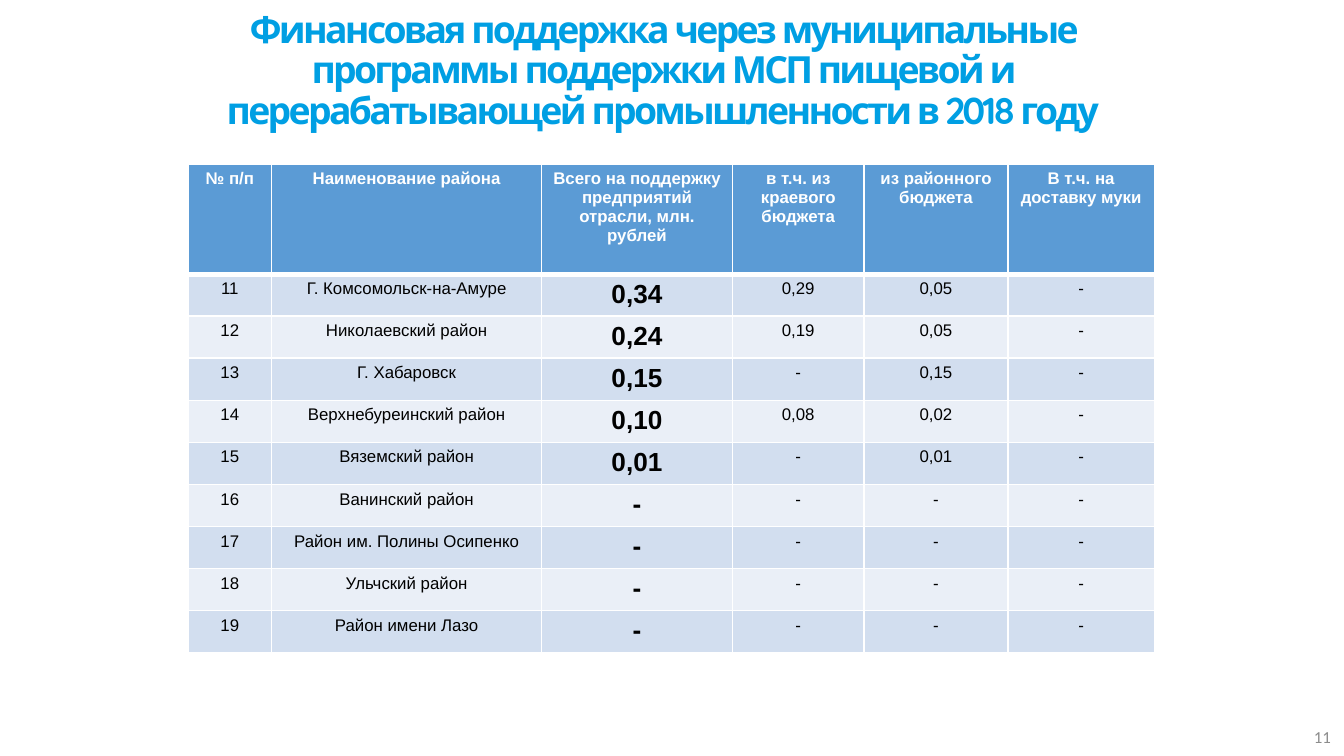
from lxml.etree import SubElement
from pptx import Presentation
from pptx.dml.color import RGBColor
from pptx.enum.text import MSO_ANCHOR, PP_ALIGN
from pptx.oxml.ns import qn
from pptx.util import Inches, Pt

TITLE = (
    "Финансовая поддержка через муниципальные программы поддержки МСП "
    "пищевой и перерабатывающей промышленности в 2018 году"
)
HEADERS = [
    "№ п/п",
    "Наименование района",
    "Всего на поддержку предприятий отрасли, млн. рублей",
    "в т.ч. из краевого бюджета",
    "из районного бюджета",
    "В т.ч. на доставку муки",
]
DISTRICTS = [
    ("Г. Комсомольск-на-Амуре", "0,34", "0,29", "0,05"),
    ("Николаевский район", "0,24", "0,19", "0,05"),
    ("Г. Хабаровск", "0,15", "-", "0,15"),
    ("Верхнебуреинский район", "0,10", "0,08", "0,02"),
    ("Вяземский район", "0,01", "-", "0,01"),
    ("Ванинский район", "-", "-", "-"),
    ("Район им. Полины Осипенко", "-", "-", "-"),
    ("Ульчский район", "-", "-", "-"),
    ("Район имени Лазо", "-", "-", "-"),
]
FIRST_NUMBER = 11
COLUMN_WIDTHS = [0.62, 2.01, 1.42, 0.98, 1.07, 1.09]
TABLE_HEIGHT = 3.64
HEADER_HEIGHT = 0.82
TOTAL_COLUMN = 2
HEADER_FILL = "5B9BD5"
BAND_FILLS = ["D2DEEF", "EAEFF7"]
WHITE = "FFFFFF"

HEADER_FORMAT = {"name": "Arial", "size": Pt(9), "bold": True}
BODY_FORMAT = {"name": "Arial", "size": Pt(9), "bold": False}
TOTAL_FORMAT = {"name": "Arial", "size": Pt(14), "bold": True}
TITLE_FORMAT = {"name": "Quicksand", "size": Pt(20), "bold": True}
NUMBER_FORMAT = {"name": "Calibri", "size": Pt(9), "bold": False}


def color(value):
    return RGBColor.from_string(value)


def write_text(frame, text, font_format, font_color, alignment):
    para = frame.paragraphs[0]
    para.alignment = alignment
    span = para.add_run()
    span.text = text
    for name, value in font_format.items():
        setattr(span.font, name, value)
    span.font.color.rgb = color(font_color)
    return para, span


def add_text_box(page, place, text, font_format, font_color, alignment):
    box = page.shapes.add_textbox(*map(Inches, place))
    frame = box.text_frame
    frame.word_wrap = True
    frame.vertical_anchor = MSO_ANCHOR.MIDDLE
    para, span = write_text(frame, text, font_format, font_color, alignment)
    return frame, para, span


def add_title(page):
    place = (1.11, 0.32, 7.64, 0.5)
    frame, para, span = add_text_box(
        page, place, TITLE, TITLE_FORMAT, "009FE3", PP_ALIGN.CENTER
    )
    frame.margin_bottom = Inches(0.12)
    para.line_spacing = 0.9
    span.font._element.set("spc", "-150")


def set_borders(cell, widths):
    properties = cell._tc.get_or_add_tcPr()
    for position, (side, width) in enumerate(widths.items()):
        line = properties.makeelement(qn(f"a:{side}"), {"w": str(Pt(width))})
        fill = SubElement(line, qn("a:solidFill"))
        SubElement(fill, qn("a:srgbClr"), val=WHITE)
        properties.insert(position, line)


def fill_cell(cell, text, font_format, font_color, fill, top=1, bottom=1):
    margins = {
        "margin_left": 0.07,
        "margin_top": 0.04,
        "margin_right": 0.07,
        "margin_bottom": 0.04,
    }
    for name, value in margins.items():
        setattr(cell, name, Inches(value))
    cell.fill.solid()
    cell.fill.fore_color.rgb = color(fill)
    write_text(cell.text_frame, text, font_format, font_color, PP_ALIGN.CENTER)
    set_borders(cell, {"lnL": 1, "lnR": 1, "lnT": top, "lnB": bottom})


def add_district_table(page):
    table = page.shapes.add_table(
        len(DISTRICTS) + 1,
        len(HEADERS),
        Inches(1.4),
        Inches(1.22),
        Inches(sum(COLUMN_WIDTHS)),
        Inches(TABLE_HEIGHT),
    ).table
    for column, width in zip(table.columns, COLUMN_WIDTHS):
        column.width = Inches(width)
    for row in table.rows:
        row.height = Inches((TABLE_HEIGHT - HEADER_HEIGHT) / len(DISTRICTS))
    table.rows[0].height = Inches(HEADER_HEIGHT)

    for column, text in enumerate(HEADERS):
        fill_cell(
            table.cell(0, column), text, HEADER_FORMAT, WHITE, HEADER_FILL, bottom=3
        )
    for index, district in enumerate(DISTRICTS):
        values = (str(FIRST_NUMBER + index), *district, "-")
        for column, text in enumerate(values):
            fill_cell(
                table.cell(index + 1, column),
                text,
                TOTAL_FORMAT if column == TOTAL_COLUMN else BODY_FORMAT,
                "000000",
                BAND_FILLS[index % 2],
                top=3 if index == 0 else 1,
            )


def main():
    deck = Presentation()
    deck.slide_width = Inches(10)
    deck.slide_height = deck.slide_width * 9 // 16
    page = deck.slides.add_slide(deck.slide_layouts[6])
    add_district_table(page)
    add_title(page)
    place = (7.75, 5.33, 2.25, 0.3)
    add_text_box(page, place, "11", NUMBER_FORMAT, "8C8C8C", PP_ALIGN.RIGHT)
    deck.save("out.pptx")


if __name__ == "__main__":
    main()
